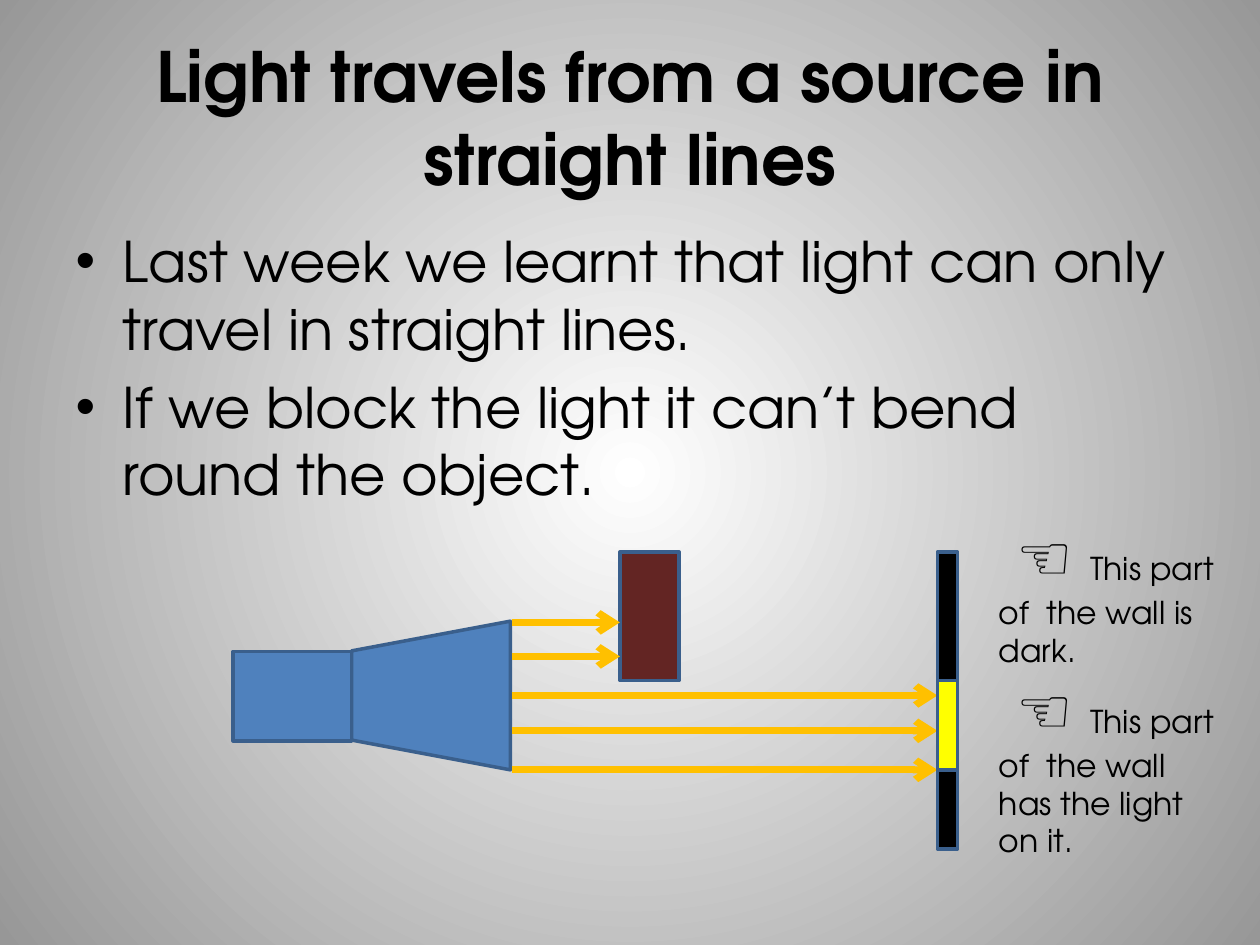
from pptx import Presentation
from pptx import util as u
from pptx.dml.color import RGBColor
from pptx.enum import shapes, text
from pptx.oxml import parse_xml
from pptx.oxml.ns import nsdecls, qn

COLORS = {
    "centre": "FFFFFF", "edge": "979797", "text": "000000",
    "torch": "4F81BD", "outline": "3A5F8C", "ray": "FFC000",
    "block": "632523", "dark": "000000", "lit": "FFFF00",
}
FONT = "TeX Gyre Adventor"


def rgb(name):
    return RGBColor.from_string(COLORS[name])


class SlideBuilder:
    """Holds the style and the current slide."""

    def __init__(self, slide):
        self.s = slide

    def background(self):
        fill = self.s.background.fill
        fill.gradient()
        for stop, pos, name in zip(fill.gradient_stops, (0, 1), ("centre", "edge")):
            stop.position = pos
            stop.color.rgb = rgb(name)
        grad = self.s.element.find(".//" + qn("a:gradFill"))
        grad.replace(grad.find(qn("a:lin")), parse_xml(
            f'<a:path {nsdecls("a")} path="circle">'
            '<a:fillToRect l="50000" t="50000" r="50000" b="50000"/></a:path>'))

    def style(self, font, size, bold=None):
        font.name, font.size, font.bold = FONT, u.Pt(size), bold
        font.color.rgb = rgb("text")

    def placeholder(self, sp, box, lines, size, bold=None):
        sp.left, sp.top, sp.width, sp.height = map(u.Inches, box)
        tf = sp.text_frame
        tf.text = "\n".join(lines)
        tf.auto_size = text.MSO_AUTO_SIZE.NONE
        for p in tf.paragraphs:
            self.style(p.font, size, bold)

    def shape(self, kind, box, fill, rotation=0):
        sp = self.s.shapes.add_shape(kind, *map(u.Inches, box))
        sp.rotation = rotation
        sp.shadow.inherit = False
        sp.fill.solid()
        sp.fill.fore_color.rgb = rgb(fill)
        sp.line.color.rgb = rgb("outline")
        sp.line.width = u.Pt(2)

    def ray(self, x1, x2, y):
        line = self.s.shapes.add_connector(
            shapes.MSO_CONNECTOR.STRAIGHT, *map(u.Inches, (x1, y, x2, y)))
        line.line.color.rgb = rgb("ray")
        line.line.width = u.Pt(4)
        ln = line.line._get_or_add_ln()
        ln.append(parse_xml(f'<a:tailEnd {nsdecls("a")} type="arrow"/>'))
        ln.addnext(parse_xml(f'<a:effectLst {nsdecls("a")}/>'))

    def wall_note(self, box, words):
        tf = self.s.shapes.add_textbox(*map(u.Inches, box)).text_frame
        tf.word_wrap = True
        tf.auto_size = text.MSO_AUTO_SIZE.SHAPE_TO_FIT_TEXT
        p = tf.paragraphs[0]
        for content, size in ((" ☜ ", 36), (words, 18)):
            r = p.add_run()
            r.text = content
            self.style(r.font, size)


def main():
    prs = Presentation()
    prs.slide_width, prs.slide_height = u.Inches(10), u.Inches(7.5)
    s = prs.slides.add_slide(prs.slide_layouts[1])
    b = SlideBuilder(s)
    b.background()

    # Title and bullets
    b.placeholder(s.shapes.title, (0.5, 0.3, 9, 1.25),
                  ["Light travels from a source in straight lines"], 39.6, True)
    b.placeholder(s.placeholders[1], (0.5, 1.75, 9, 2.39),
                  ["Last week we learnt that light can only travel in straight lines.",
                   "If we block the light it can’t bend round the object."], 32)

    # Torch: head and handle
    rect = shapes.MSO_SHAPE.RECTANGLE
    b.shape(shapes.MSO_SHAPE.FLOWCHART_MANUAL_OPERATION,
            (2.83, 4.89, 1.18, 1.26), "torch", 90)
    b.shape(rect, (1.85, 5.17, 0.94, 0.71), "torch")

    # Rays that reach the wall, then the block and the rays it stops
    torch_x, block_x, wall_x = 4.06, 4.92, 7.44
    for y in (5.52, 5.8, 6.11):
        b.ray(torch_x, wall_x, y)
    b.shape(rect, (block_x, 4.38, 0.47, 1.02), "block")
    for y in (4.94, 5.21):
        b.ray(torch_x, block_x, y)

    # Wall, stacked from the top down
    top = 4.38
    for height, fill in ((1.02, "dark"), (0.71, "lit"), (0.63, "dark")):
        b.shape(rect, (wall_x, top, 0.16, height), fill)
        top += height

    # Notes beside the wall
    b.wall_note((7.83, 4.06, 1.97, 1.31), "This part of  the wall is dark.")
    b.wall_note((7.83, 5.27, 1.97, 1.62), "This part of  the wall has the light on it.")

    prs.save("out.pptx")


if __name__ == "__main__":
    main()
